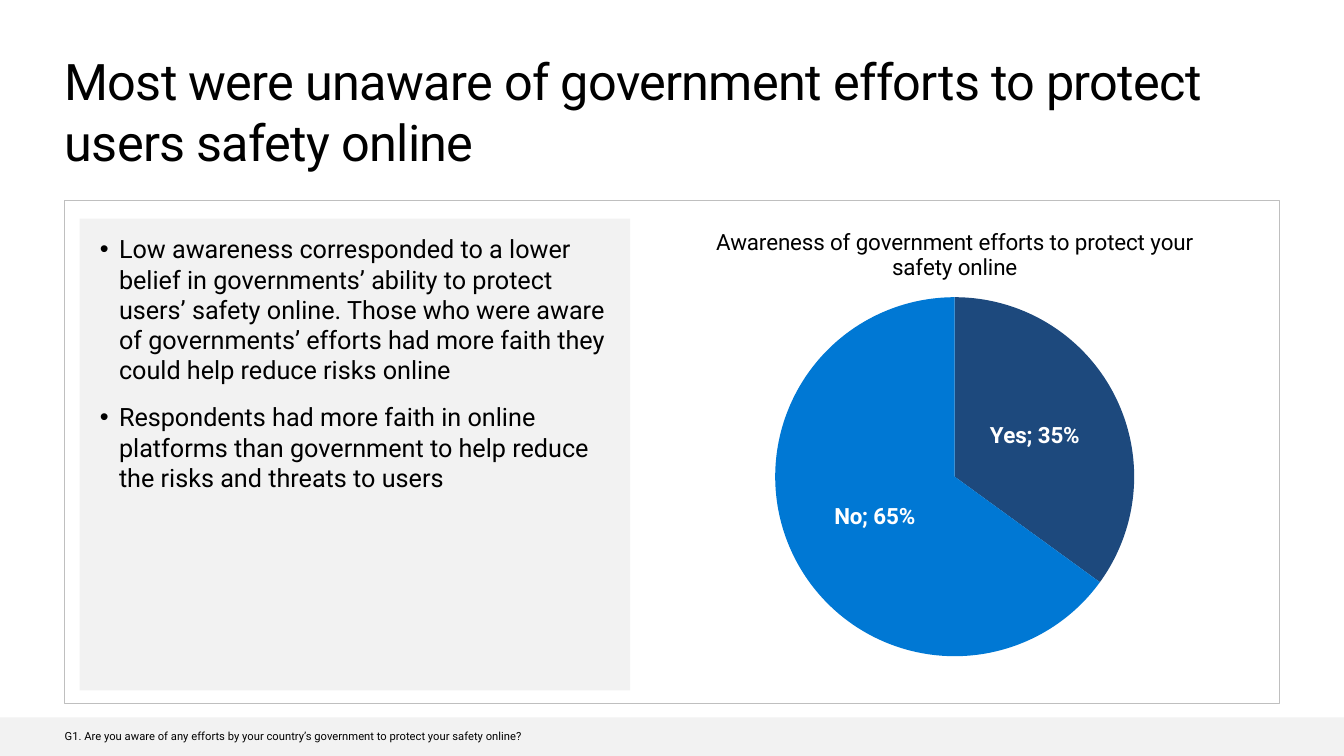
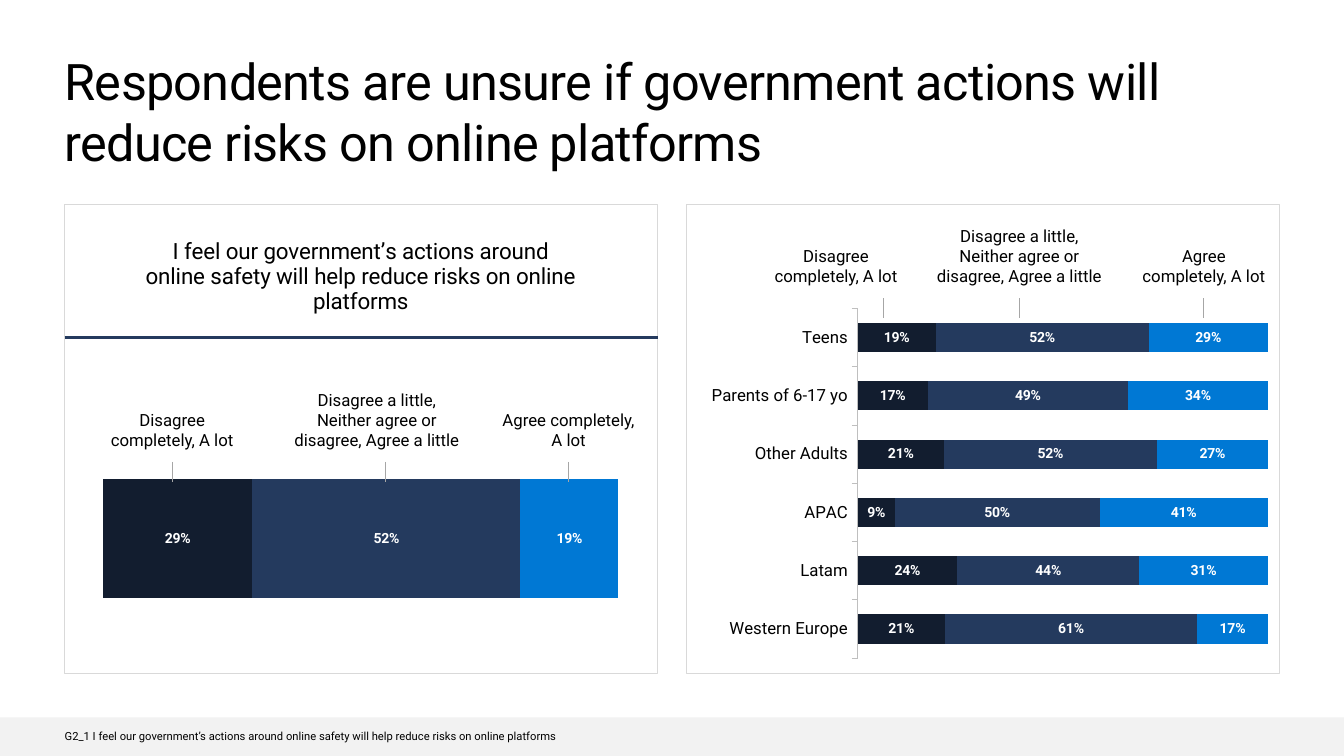
"""Build two survey slides on awareness of and trust in government online safety efforts."""
from lxml.etree import SubElement
from pptx import Presentation
from pptx.chart.data import CategoryChartData
from pptx.dml.color import RGBColor
from pptx.enum.chart import XL_CHART_TYPE, XL_LABEL_POSITION, XL_TICK_MARK
from pptx.enum.shapes import MSO_CONNECTOR, MSO_SHAPE
from pptx.enum.text import MSO_ANCHOR, PP_ALIGN
from pptx.oxml import parse_xml
from pptx.oxml.ns import nsdecls, qn
from pptx.util import Cm, Pt

FONT = "Roboto"
BLACK, WHITE, PALE, FRAME, PANEL, TICK = "000000", "FFFFFF", "F2F2F2", "BFBFBF", "D9D9D9", "A6A6A6"
NIGHT, NAVY, OCEAN, BLUE = "121D2F", "243A5E", "1D497D", "0078D4"
SLIDE_W, SLIDE_H = 33.87, 19.05
MARGIN, CONTENT_W = 1.63, 30.61
FOOTER_H = 0.97
PANEL_TOP, PANEL_W, PANEL_H = 5.16, 14.94, 11.81
LABEL_H, TICK_GAP, TICK_H = 1.55, 0.3, 0.5

AWARENESS = {
    "title": "Most were unaware of government efforts to protect users safety online",
    "footer": "G1. Are you aware of any efforts by your country’s government to protect your safety online?",
    "findings": [
        "Low awareness corresponded to a lower belief in governments’ ability to protect\n"
        "users’ safety online. Those who were aware\n"
        "of governments’ efforts had more faith they could help reduce risks online",
        "Respondents had more faith in online platforms than government to help reduce "
        "the risks and threats to users",
    ],
    "question": "Awareness of government efforts to protect your safety online",
    "answers": [("Yes", 0.35, OCEAN), ("No", 0.65, BLUE)],
}
TRUST = {
    "title": "Respondents are unsure if government actions will reduce risks on online platforms",
    "footer": "G2_1 I feel our government’s actions around online safety will help reduce risks on online platforms",
    "question": "I feel our government’s actions around online safety will help reduce risks on online platforms",
}
OPINIONS = [
    ("Disagree completely, A lot", NIGHT),
    ("Disagree a little, Neither agree or disagree, Agree a little", NAVY),
    ("Agree completely, A lot", BLUE),
]
OVERALL = {"1": (0.29, 0.52, 0.19)}
BY_GROUP = {
    "Teens": (0.19, 0.52, 0.29),
    "Parents of 6-17 yo": (0.17, 0.49, 0.34),
    "Other Adults": (0.21, 0.52, 0.27),
    "APAC": (0.09, 0.50, 0.41),
    "Latam": (0.24, 0.44, 0.31),
    "Western Europe": (0.21, 0.61, 0.17),
}
# label centre, label width, tick position
OVERALL_LABELS = [(4.34, 3.81, 4.34), (9.5, 4.37, 9.7), (14.33, 3.66, 14.33)]
GROUP_LABELS = [(21.07, 3.43, 22.25), (25.69, 4.34, 25.7), (30.34, 3.28, 30.33)]


def rgb(color):
    """Turn a hex string into a colour."""
    return RGBColor.from_string(color)


def apply(target, values):
    """Set each named value on the target."""
    for name, value in values.items():
        setattr(target, name, value)


def set_font(font, size, color=BLACK, bold=False):
    """Give a font the deck's typeface with a size and colour."""
    apply(font, {"name": FONT, "size": Pt(size), "bold": bold})
    font.color.rgb = rgb(color)


def paint(fill, color):
    """Make a fill solid."""
    fill.solid()
    fill.fore_color.rgb = rgb(color)


def add_box(slide, area, fill=None, line=None):
    """Add a plain rectangle."""
    box = slide.shapes.add_shape(MSO_SHAPE.RECTANGLE, *map(Cm, area))
    box.shadow.inherit = False
    if fill:
        paint(box.fill, fill)
    else:
        box.fill.background()
    if line:
        paint(box.line.fill, line)
        box.line.width = Pt(0.75)
    else:
        box.line.fill.background()
    return box


def write(frame, paragraphs, size, align=PP_ALIGN.LEFT, anchor=MSO_ANCHOR.TOP,
          insets=(0, 0, 0, 0), bullet=False, spacing=None):
    """Fill a text frame with paragraphs."""
    sides = ("margin_left", "margin_top", "margin_right", "margin_bottom")
    apply(frame, {"word_wrap": True, "vertical_anchor": anchor, **dict(zip(sides, map(Cm, insets)))})
    for index, text in enumerate(paragraphs):
        paragraph = frame.add_paragraph() if index else frame.paragraphs[0]
        apply(paragraph, {"text": text, "alignment": align})
        if bullet:
            properties = paragraph._p.get_or_add_pPr()
            apply(paragraph, {"space_after": Pt(12)})
            properties.set("marL", str(Cm(0.48)))
            properties.set("indent", str(-Cm(0.48)))
            SubElement(properties, qn("a:buFont")).set("typeface", "Arial")
            SubElement(properties, qn("a:buChar")).set("char", "•")
        for run in paragraph.runs:
            set_font(run.font, size)
            if spacing:
                run._r.get_or_add_rPr().set("spc", str(spacing))


def add_text(slide, area, text, size, **layout):
    """Add a one-paragraph text box."""
    write(slide.shapes.add_textbox(*map(Cm, area)).text_frame, [text], size, **layout)


def add_line(slide, start, end, color, width):
    """Add a straight line."""
    line = slide.shapes.add_connector(MSO_CONNECTOR.STRAIGHT, *map(Cm, start + end))
    paint(line.line.fill, color)
    line.line.width = Pt(width)
    SubElement(line._element.spPr, qn("a:effectLst"))


def add_base(deck, content):
    """Add a slide with its title and footer band."""
    slide = deck.slides.add_slide(deck.slide_layouts[6])
    add_text(slide, (MARGIN, 1.27, CONTENT_W, 3.07), content["title"], 36, spacing=-50)
    add_box(slide, (0, SLIDE_H - FOOTER_H, SLIDE_W, FOOTER_H), PALE)
    add_text(slide, (MARGIN, 18.39, CONTENT_W, 0.33), content["footer"], 8, anchor=MSO_ANCHOR.MIDDLE)
    return slide


def add_chart(slide, area, kind, categories, rows, plot_area, title=None):
    """Add a chart with a fixed plot area and an optional title."""
    data = CategoryChartData(number_format="0%")
    data.categories = categories
    for number, values in enumerate(rows, 1):
        data.add_series(f"Series {number}", values)
    chart = slide.shapes.add_chart(kind, *map(Cm, area), data).chart
    set_font(chart.font, 10)
    apply(chart, {"has_legend": False, "has_title": bool(title)})
    if title:
        chart.chart_title.include_in_layout = False
        frame = chart.chart_title.text_frame
        frame.text = title
        set_font(frame.paragraphs[0].runs[0].font, 16)
    plot = chart._chartSpace.chart.plotArea
    for old in plot.findall(qn("c:layout")):
        plot.remove(old)
    sizes = "".join(f'<c:{name} val="{value}"/>' for name, value in zip("xywh", plot_area))
    plot.insert(0, parse_xml(
        f'<c:layout {nsdecls("c")}><c:manualLayout><c:layoutTarget val="inner"/>'
        f'<c:xMode val="edge"/><c:yMode val="edge"/>{sizes}</c:manualLayout></c:layout>'))
    return chart


def label_series(series, size, with_category=False):
    """Show bold white percentages in the middle of each part."""
    labels = series.data_labels
    apply(labels, {"show_value": True, "show_category_name": with_category, "show_percentage": False,
                   "number_format": "0%", "number_format_is_linked": False,
                   "position": XL_LABEL_POSITION.CENTER})
    set_font(labels.font, size, WHITE, True)
    if with_category:
        separator = parse_xml(f'<c:separator {nsdecls("c")}>; </c:separator>')
        labels._element.find(qn("c:showBubbleSize")).addnext(separator)


def add_opinion_chart(slide, area, answers, plot_area, title=None):
    """Add stacked bars of the three opinions."""
    chart = add_chart(slide, area, XL_CHART_TYPE.BAR_STACKED_100, list(answers),
                      zip(*answers.values()), plot_area, title)
    plot = chart.plots[0]
    apply(plot, {"gap_width": 100, "overlap": 100, "vary_by_categories": False})
    apply(chart.value_axis, {"has_major_gridlines": False, "visible": False,
                             "minimum_scale": 0, "maximum_scale": 1})
    for series, (_, color) in zip(plot.series, OPINIONS):
        paint(series.format.fill, color)
        label_series(series, 10)
    return chart


def add_opinion_labels(slide, places, bottom):
    """Add the opinion names with their tick lines above a bar."""
    for (text, _), (centre, width, tick) in zip(OPINIONS, places):
        add_text(slide, (centre - width / 2, bottom - LABEL_H, width, LABEL_H), text, 12,
                 align=PP_ALIGN.CENTER, anchor=MSO_ANCHOR.BOTTOM)
        top = bottom + TICK_GAP
        add_line(slide, (tick, top), (tick, top + TICK_H), TICK, 0.5)


def build_awareness(deck):
    """Build the slide with findings and the awareness pie."""
    slide = add_base(deck, AWARENESS)
    add_box(slide, (MARGIN, 5.05, CONTENT_W, 12.67), line=FRAME)
    findings = add_box(slide, (2.01, 5.51, 13.87, 11.89), PALE)
    write(findings.text_frame, AWARENESS["findings"], 18, insets=(0.51, 0.38, 0, 0.38), bullet=True)
    names, shares, colors = zip(*AWARENESS["answers"])
    chart = add_chart(slide, (16.26, 5.28, 15.6, 11.61), XL_CHART_TYPE.PIE, names, [shares],
                      (0.21, 0.19, 0.58, 0.78), AWARENESS["question"])
    pie = chart.plots[0].series[0]
    for index, color in enumerate(colors):
        paint(pie.points[index].format.fill, color)
    label_series(pie, 16, True)


def build_trust(deck):
    """Build the slide with overall and group opinions."""
    slide = add_base(deck, TRUST)
    for left in (MARGIN, MARGIN + CONTENT_W - PANEL_W):
        add_box(slide, (left, PANEL_TOP, PANEL_W, PANEL_H), line=PANEL)
    add_opinion_chart(slide, (2.18, 5.51, 13.82, 11.05), OVERALL,
                      (0.03, 0.46, 0.94, 0.54), TRUST["question"]).category_axis.visible = False
    add_line(slide, (MARGIN, 8.51), (MARGIN + PANEL_W, 8.51), NAVY, 2)
    add_opinion_labels(slide, OVERALL_LABELS, 11.34)
    groups = add_opinion_chart(slide, (17.6, 7.39, 14.35, 9.58), BY_GROUP,
                               (0.28, 0.04, 0.72, 0.92)).category_axis
    apply(groups, {"reverse_order": True, "major_tick_mark": XL_TICK_MARK.OUTSIDE,
                   "minor_tick_mark": XL_TICK_MARK.NONE, "has_major_gridlines": False})
    set_font(groups.tick_labels.font, 12)
    paint(groups.format.line.fill, FRAME)
    groups.format.line.width = Pt(0.5)
    add_opinion_labels(slide, GROUP_LABELS, 7.21)


def main():
    """Build and save the deck."""
    deck = Presentation()
    apply(deck, {"slide_width": Cm(SLIDE_W), "slide_height": Cm(SLIDE_H)})
    build_awareness(deck)
    build_trust(deck)
    deck.save("out.pptx")


if __name__ == "__main__":
    main()
